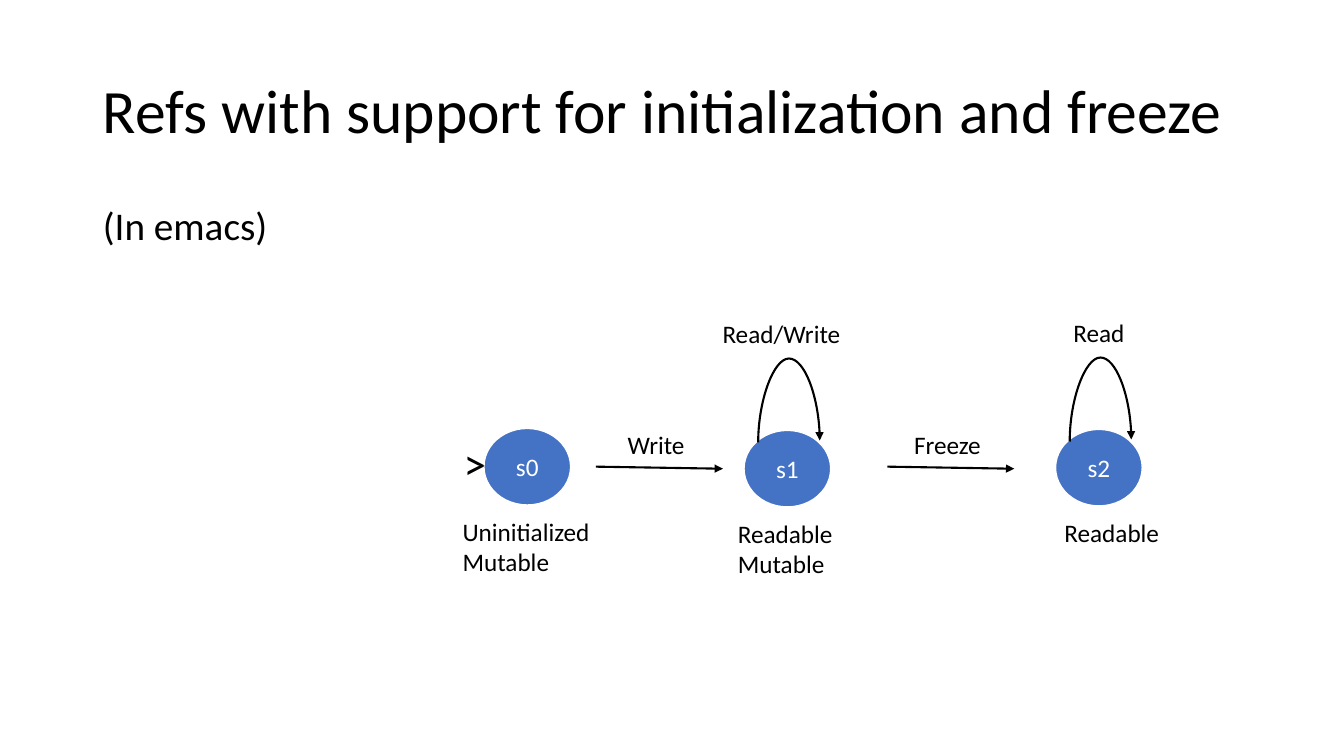
from lxml.etree import SubElement
from pptx import Presentation
from pptx.dml.color import RGBColor
from pptx.enum.shapes import MSO_CONNECTOR as CONN, MSO_SHAPE as SHAPE
from pptx.enum.text import MSO_ANCHOR as ANCHOR, PP_ALIGN as ALIGN
from pptx.oxml.ns import qn
from pptx.util import Inches, Pt

COLORS = {"text": "000000", "state": "4472C4", "paper": "FFFFFF"}
WIDTH, HEIGHT = Inches(13.33), Inches(7.5)
COL, ROW = WIDTH / 100, HEIGHT / 100  # the slide is a grid of 100 by 100
LABEL_W, LINE_H = 13.05, 5.33


def grid(x, y, w, h):
    return round(x * COL), round(y * ROW), round(w * COL), round(h * ROW)


def rgb(name):
    return RGBColor.from_string(COLORS[name])


def write(tf, lines, size, color="text", align=ALIGN.LEFT, **spacing):
    for i, line in enumerate(lines):
        p = tf.paragraphs[0] if i == 0 else tf.add_paragraph()
        for name, value in {"alignment": align, **spacing}.items():
            setattr(p, name, value)
        r = p.add_run()
        r.text = line
        for name, value in {"name": "Calibri", "size": Pt(size)}.items():
            setattr(r.font, name, value)
        r.font.color.rgb = rgb(color)


def label(s, box, lines, size=18, align=ALIGN.LEFT):
    tf = s.shapes.add_textbox(*grid(*box)).text_frame
    tf.word_wrap = True
    write(tf, lines, size, align=align)


def style_arrow(line):
    line.line.color.rgb = rgb("text")
    line.line.width = Pt(1.5)
    SubElement(line.line._get_or_add_ln(), qn("a:tailEnd"), type="triangle")
    SubElement(line._element.spPr, qn("a:effectLst"))


def add_heading(s, title_box, body_box):
    title, body = s.shapes.title, s.placeholders[1]
    for sp, box in ((title, title_box), (body, body_box)):
        sp.left, sp.top, sp.width, sp.height = grid(*box)
    title.text_frame.vertical_anchor = ANCHOR.MIDDLE
    write(title.text_frame, ["Refs with support for initialization and freeze"], 44,
          line_spacing=0.9)
    # Body text without a bullet
    pPr = body.text_frame.paragraphs[0]._p.get_or_add_pPr()
    pPr.set("marL", "0")
    pPr.set("indent", "0")
    SubElement(pPr, qn("a:buNone"))
    write(body.text_frame, ["(In emacs)"], 28, line_spacing=0.9, space_before=Pt(0))


def add_loop(s, x, y, span, action, action_x):
    """Self-transition: a nearly flat curve turned a quarter, bent far upwards."""
    w, h, rise = Inches(0.02), round(span * COL), Inches(0.83)
    left, top = round(x * COL - w / 2), round(y * ROW - h / 2)
    loop = s.shapes.add_connector(CONN.CURVE, left + w, top + h, left, top)
    loop._element.spPr.find(qn("a:xfrm")).set("rot", "5400000")
    guides = loop._element.spPr.find(qn("a:prstGeom")).get_or_add_avLst()
    SubElement(guides, qn("a:gd"), name="adj1", fmla=f"val {round(rise / w * 100000)}")
    style_arrow(loop)
    label(s, (action_x - 7.5, y - 16.94, 15, LINE_H), [action], align=ALIGN.CENTER)


def add_state(s, box, name, caption, caption_dx, action=None, action_dx=0):
    x, y, w, h = box
    sp = s.shapes.add_shape(SHAPE.OVAL, *grid(*box))
    sp.shadow.inherit = False
    sp.fill.solid()
    sp.fill.fore_color.rgb = rgb("state")
    sp.line.color.rgb = rgb("paper")
    sp.line.width = Pt(1)
    sp.text_frame.vertical_anchor = ANCHOR.MIDDLE
    write(sp.text_frame, [name], 18, "paper", ALIGN.CENTER)
    label(s, (x + caption_dx, y + 10.94, LABEL_W, 1.47 + 4 * len(caption)), caption)
    if action:
        add_loop(s, x + 3.34, y + 1.47, 4.58, action, x + action_dx)


def add_transition(s, x, y, length, action):
    line = s.shapes.add_connector(CONN.STRAIGHT, round(x * COL), round(y * ROW),
                                  round((x + length) * COL), round((y + 0.27) * ROW))
    style_arrow(line)
    middle = x + length / 2 - 0.25
    label(s, (middle - LABEL_W / 2, y - 5.6, LABEL_W, LINE_H), [action], align=ALIGN.CENTER)


def add_diagram(s, left, top):
    # States: offset in the diagram, name, caption and its shift, loop action and its shift
    for dx, dy, *state in (
        (2.33, 15.47, "s0", ["Uninitialized", "Mutable"], -2.33),
        (21.68, 15.73, "s1", ["Readable", "Mutable"], -1.2, "Read/Write", 2.78),
        (44.86, 15.6, "s2", ["Readable"], -0.08, "Read", 3.23),
    ):
        add_state(s, (left + dx, top + dy, 6.45, 10.13), *state)
    # Start marker
    label(s, (left + 0.08, top + 15.73, 3.3, 8.53), [">"], 32)
    # Transitions between states
    for dx, action in ((10.66, "Write"), (32.34, "Freeze")):
        add_transition(s, left + dx, top + 20.53, 9.45, action)


def main():
    prs = Presentation()
    prs.slide_width, prs.slide_height = WIDTH, HEIGHT
    s = prs.slides.add_slide(prs.slide_layouts[1])
    add_heading(s, (6.9, 5.33, 86.25, 19.33), (6.9, 26.67, 86.25, 63.47))
    add_diagram(s, 33.68, 41.2)
    prs.save("out.pptx")


if __name__ == "__main__":
    main()
